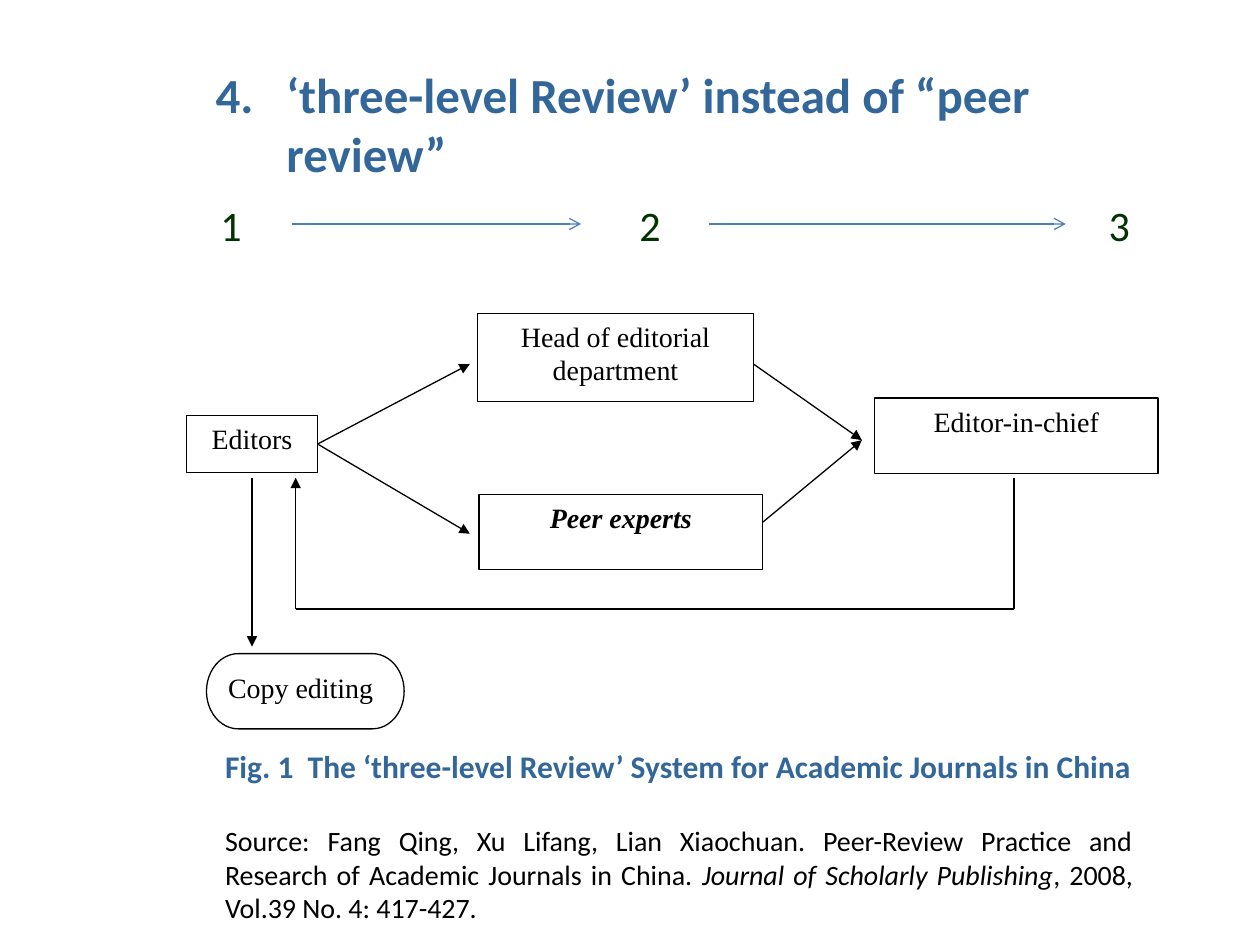
"""Build the slide on the three-level review system."""
from dataclasses import dataclass
from typing import Optional

from pptx import Presentation, util as u
from pptx.dml.color import RGBColor
from pptx.enum import shapes, text
from pptx.oxml.ns import qn
from pptx.oxml.xmlchemy import OxmlElement

BLACK, WHITE, BLUE, GREEN, ARROW_BLUE = "000000", "FFFFFF", "336699", "003300", "4B7EBC"
ALIGN = text.PP_ALIGN
KIND = shapes.MSO_SHAPE


@dataclass
class Step:
    label: str
    left: float
    top: float
    width: float
    height: float
    kind: KIND = KIND.FLOWCHART_PROCESS
    align: ALIGN = ALIGN.CENTER
    emphasis: bool = False


@dataclass
class Link:
    start: tuple[float, float]
    end: tuple[float, float]
    head: Optional[str] = "triangle"
    color: str = BLACK
    source: Optional[str] = None


STEPS = [
    Step("Editors", 106.5, 237.5, 75, 32.5, KIND.RECTANGLE),
    Step("Head of editorial department", 273, 179, 157.5, 50.5),
    Step("Peer experts", 273.75, 282.5, 162, 43, emphasis=True),
    Step("Editor-in-chief", 499.75, 227.5, 162, 43),
    Step("Copy editing", 118, 373.5, 113, 43, KIND.FLOWCHART_TERMINATOR, ALIGN.LEFT),
]
LINKS = [
    Link((181.5, 251.5), (268.5, 208), source="Editors"),
    Link((181.5, 251.5), (268.5, 305), source="Editors"),
    Link((430.5, 208), (492.5, 251.5)),
    Link((435.75, 298.5), (492.5, 251.5)),
    Link((144, 273), (144, 369.5)),
    Link((579.5, 273), (579.5, 348), None),
    Link((579.5, 348), (169, 348), None),
    Link((169, 348), (169, 273)),
    Link((167, 128), (332, 128), "arrow", ARROW_BLUE),
    Link((405, 128), (609, 128), "arrow", ARROW_BLUE),
]
LEVEL_CENTERS = {"1": 132, "2": 371.5, "3": 639.5}


def rgb(value: str) -> RGBColor:
    return RGBColor.from_string(value)


def style(paragraph, name: str, size: float, color: str, bold=False, italic=False) -> None:
    for run in paragraph.runs:
        font = run.font
        font.name, font.size, font.bold, font.italic = name, u.Pt(size), bold, italic
        font.color.rgb = rgb(color)


def draw_step(slide, step: Step):
    box = slide.shapes.add_shape(
        step.kind, *map(u.Pt, (step.left, step.top, step.width, step.height)))
    box.shadow.inherit = False
    box.fill.solid()
    box.fill.fore_color.rgb = rgb(WHITE)
    box.line.color.rgb = rgb(BLACK)
    box.line.width = u.Pt(0.75)
    frame = box.text_frame
    frame.text = step.label
    frame.vertical_anchor = text.MSO_ANCHOR.TOP
    label = frame.paragraphs[0]
    label.alignment = step.align
    style(label, "Times New Roman", 16, BLACK, step.emphasis, step.emphasis)
    return box


def draw_link(slide, link: Link, boxes: dict) -> None:
    line = slide.shapes.add_connector(
        shapes.MSO_CONNECTOR.STRAIGHT, *map(u.Pt, link.start + link.end))
    if link.source:
        line.begin_connect(boxes[link.source], 3)
    line.line.color.rgb = rgb(link.color)
    line.line.width = u.Pt(0.75)
    if link.head:
        tail = OxmlElement("a:tailEnd")
        tail.set("type", link.head)
        line.line._get_or_add_ln().append(tail)
    line._element.spPr.append(OxmlElement("a:effectLst"))


def add_text(slide, left: float, top: float, width: float, height: float):
    frame = slide.shapes.add_textbox(*map(u.Pt, (left, top, width, height))).text_frame
    frame.word_wrap = True
    return frame


def draw_title(slide) -> None:
    title = slide.shapes.title
    title.left, title.top, title.width, title.height = map(u.Pt, (116, 33.5, 569, 76))
    frame = title.text_frame
    frame.text = "‘three-level Review’ instead of “peer review”"
    frame.auto_size = text.MSO_AUTO_SIZE.NONE
    frame.vertical_anchor = text.MSO_ANCHOR.TOP
    heading = frame.paragraphs[0]
    properties = heading._p.get_or_add_pPr()
    properties.set("marL", str(u.Pt(40.5)))
    properties.set("indent", str(-u.Pt(40.5)))
    number = OxmlElement("a:buAutoNum")
    number.set("type", "arabicPeriod")
    number.set("startAt", "4")
    properties.append(number)
    heading.alignment = ALIGN.LEFT
    style(heading, "Calibri", 28, BLUE, bold=True)


def draw_levels(slide) -> None:
    for level, center in LEVEL_CENTERS.items():
        frame = add_text(slide, center - 20, 106, 40, 45)
        frame.text = level
        frame.vertical_anchor = text.MSO_ANCHOR.MIDDLE
        frame.paragraphs[0].alignment = ALIGN.CENTER
        style(frame.paragraphs[0], "Calibri", 24, GREEN)


def draw_caption(slide) -> None:
    frame = add_text(slide, 121.5, 423.5, 533, 108.5)
    frame.text = "Fig. 1  The ‘three-level Review’ System for Academic Journals in China"
    style(frame.paragraphs[0], "Calibri", 18, BLUE, bold=True)
    source = frame.add_paragraph()
    for part in (
        "Source: Fang Qing, Xu Lifang, Lian Xiaochuan. Peer-Review Practice and "
        "Research of Academic Journals in China. ",
        "Journal of Scholarly Publishing",
        ", 2008, Vol.39 No. 4: 417-427.",
    ):
        source.add_run().text = part
    source.alignment = ALIGN.JUSTIFY
    source.space_before = u.Pt(22)
    style(source, "Calibri", 16, BLACK)
    source.runs[1].font.italic = True


def main() -> None:
    deck = Presentation()
    deck.slide_width, deck.slide_height = u.Pt(720), u.Pt(540)
    slide = deck.slides.add_slide(deck.slide_layouts[5])
    draw_title(slide)
    draw_levels(slide)
    boxes = {step.label: draw_step(slide, step) for step in STEPS}
    for link in LINKS:
        draw_link(slide, link, boxes)
    draw_caption(slide)
    deck.save("out.pptx")


if __name__ == "__main__":
    main()
